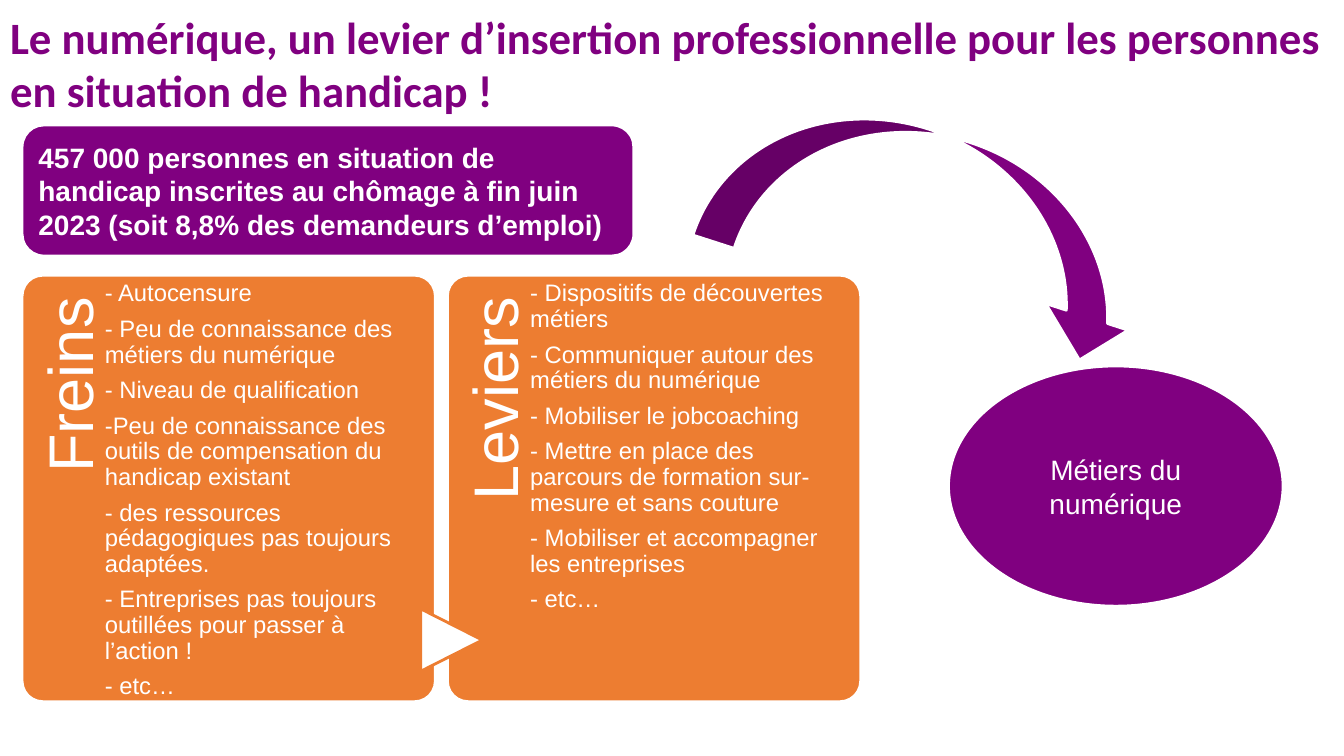
import pptx
import pptx.dml.color
import pptx.enum.shapes
import pptx.enum.text
import pptx.util
from dataclasses import dataclass
from typing import Any

Pt = pptx.util.Pt
RGBColor = pptx.dml.color.RGBColor
Shape = pptx.enum.shapes.MSO_SHAPE
Align = pptx.enum.text.PP_ALIGN
Anchor = pptx.enum.text.MSO_ANCHOR

PURPLE = RGBColor(0x80, 0x00, 0x80)
ORANGE = RGBColor(0xED, 0x7D, 0x31)
WHITE = RGBColor(0xFF, 0xFF, 0xFF)


@dataclass(frozen=True)
class Box:
    left: float
    top: float
    width: float
    height: float

    def lengths(self) -> tuple[int, ...]:
        return tuple(Pt(v) for v in (self.left, self.top, self.width, self.height))


@dataclass(frozen=True)
class Style:
    size: float
    color: RGBColor = WHITE
    font: str = "Arial"
    bold: bool = False
    align: Any = Align.LEFT
    anchor: Any = Anchor.TOP
    line_spacing: float = 1.0
    space_after: float = 0
    insets: tuple[float, float, float, float] = (7.2, 3.6, 7.2, 3.6)


@dataclass(frozen=True)
class Panel:
    label: str
    items: tuple[str, ...]


TITLE_STYLE = Style(32, PURPLE, "Calibri", True)
FIGURE_STYLE = Style(20, bold=True, anchor=Anchor.MIDDLE)
GOAL_STYLE = Style(20, align=Align.CENTER, anchor=Anchor.MIDDLE)
LABEL_STYLE = Style(45, align=Align.RIGHT, line_spacing=0.9, space_after=19,
                    insets=(50.4, 7.9, 11.5, 231.8))
LIST_STYLE = Style(17, line_spacing=0.9, space_after=7, insets=(0, 4.3, 0, 0))

PANEL_LEFT, PANEL_TOP, PANEL_PITCH = 15.8, 196.6, 303.8
PANEL_WIDTH, PANEL_HEIGHT = 295.2, 304.6
LIST_OFFSET, LIST_WIDTH = 59.1, 219.6

PANELS = (
    Panel("Freins", (
        "- Autocensure",
        "- Peu de connaissance des métiers du numérique",
        "- Niveau de qualification",
        "-Peu de connaissance des outils de compensation du handicap existant",
        "- des ressources pédagogiques pas toujours adaptées.",
        "- Entreprises pas toujours outillées pour passer à l’action !",
        "- etc…",
    )),
    Panel("Leviers", (
        "- Dispositifs de découvertes métiers",
        "- Communiquer autour des métiers du numérique",
        "- Mobiliser le jobcoaching",
        "- Mettre en place des parcours de formation sur-mesure et sans couture",
        "- Mobiliser et accompagner les entreprises",
        "- etc…",
    )),
)


def write(shape: Any, lines: tuple[str, ...], style: Style) -> None:
    frame = shape.text_frame
    frame.word_wrap = True
    frame.auto_size = pptx.enum.text.MSO_AUTO_SIZE.NONE
    frame.vertical_anchor = style.anchor
    (frame.margin_left, frame.margin_top,
     frame.margin_right, frame.margin_bottom) = (Pt(v) for v in style.insets)
    for index, line in enumerate(lines):
        paragraph = frame.add_paragraph() if index else frame.paragraphs[0]
        paragraph.alignment = style.align
        paragraph.line_spacing = style.line_spacing
        paragraph.space_after = Pt(style.space_after)
        run = paragraph.add_run()
        run.text = line
        run.font.name = style.font
        run.font.size = Pt(style.size)
        run.font.bold = style.bold
        run.font.color.rgb = style.color


def add_figure(slide: Any, kind: Any, box: Box, fill: RGBColor,
               line: RGBColor = WHITE, rotation: float = 0) -> Any:
    shape = slide.shapes.add_shape(kind, *box.lengths())
    shape.shadow.inherit = False
    shape.fill.solid()
    shape.fill.fore_color.rgb = fill
    shape.line.color.rgb = line
    shape.line.width = Pt(2)
    shape.rotation = rotation
    return shape


def add_panel(slide: Any, left: float, panel: Panel) -> None:
    shift = (PANEL_HEIGHT - PANEL_WIDTH) / 2
    turned = Box(left - shift, PANEL_TOP + shift, PANEL_HEIGHT, PANEL_WIDTH)
    card = add_figure(slide, Shape.ROUNDED_RECTANGLE, turned, ORANGE, rotation=270)
    card.adjustments[0] = 0.05
    write(card, (panel.label,), LABEL_STYLE)
    area = Box(left + LIST_OFFSET, PANEL_TOP, LIST_WIDTH, PANEL_HEIGHT)
    write(slide.shapes.add_textbox(*area.lengths()), panel.items, LIST_STYLE)


def main() -> None:
    presentation = pptx.Presentation()
    presentation.slide_width, presentation.slide_height = Pt(960), Pt(540)
    slide = presentation.slides.add_slide(presentation.slide_layouts[5])

    title = slide.shapes.title
    title.left, title.top, title.width, title.height = Box(0, 3, 960, 124).lengths()
    write(title, ("Le numérique, un levier d’insertion professionnelle pour les "
                  "personnes en situation de handicap !",), TITLE_STYLE)

    unemployment = add_figure(slide, Shape.ROUNDED_RECTANGLE,
                              Box(15.8, 89.3, 437, 93.6), PURPLE)
    write(unemployment, ("457 000 personnes en situation de handicap inscrites au chômage "
                         "à fin juin 2023 (soit 8,8% des demandeurs d’emploi)",), FIGURE_STYLE)

    goal = add_figure(slide, Shape.OVAL, Box(677.5, 261.4, 239, 171.6), PURPLE)
    write(goal, ("Métiers du numérique",), GOAL_STYLE)

    add_figure(slide, Shape.CURVED_DOWN_ARROW,
               Box(506.2, 96.5, 321.1, 123.8), PURPLE, rotation=17.9)

    for index, panel in enumerate(PANELS):
        add_panel(slide, PANEL_LEFT + index * PANEL_PITCH, panel)

    add_figure(slide, Shape.ISOSCELES_TRIANGLE,
               Box(300.2, 435.2, 44.6, 44), WHITE, ORANGE, rotation=90)

    presentation.save("out.pptx")


if __name__ == "__main__":
    main()
